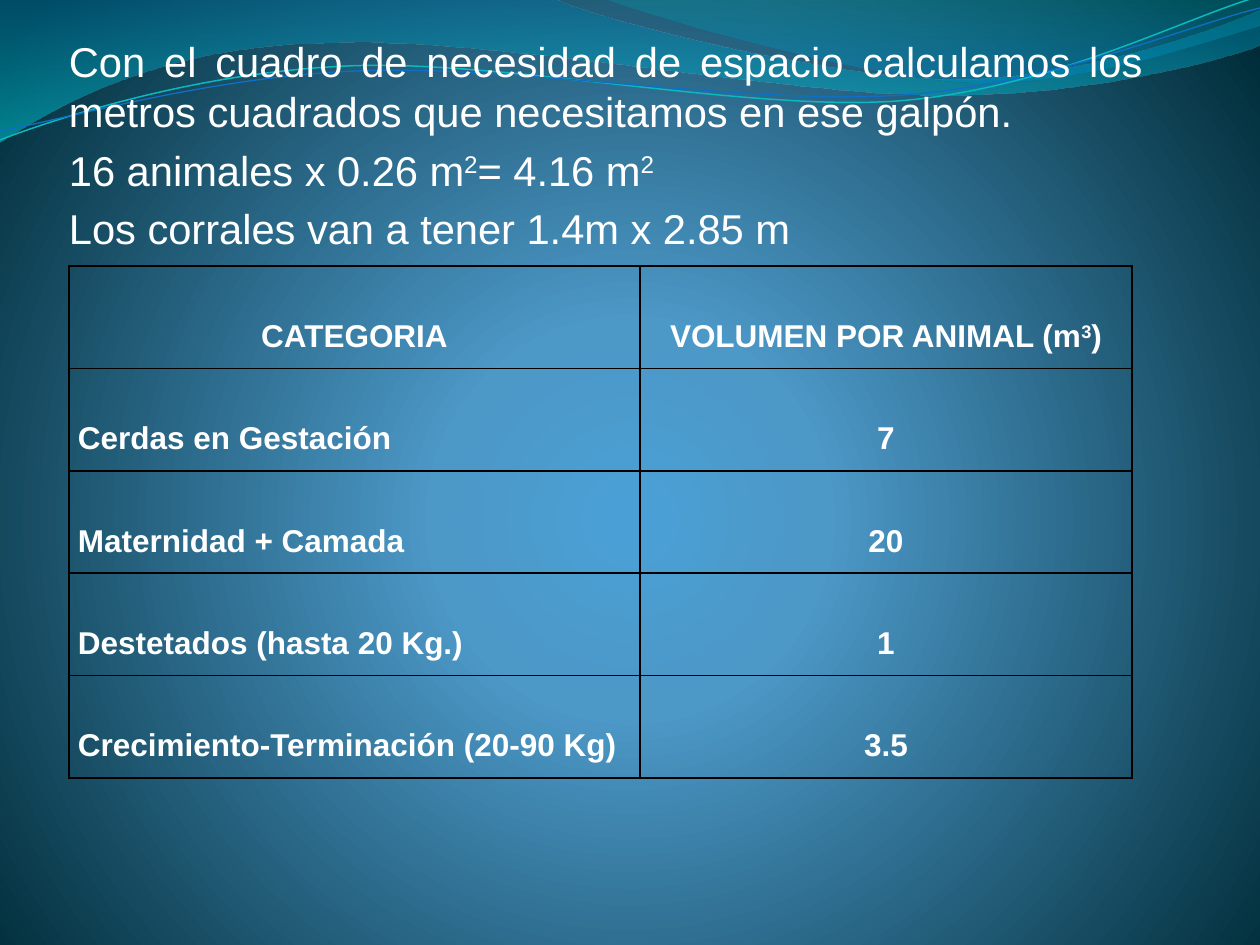
from math import cos, radians, sin

from lxml.etree import SubElement
from pptx import Presentation
from pptx.dml.color import RGBColor
from pptx.enum.text import MSO_ANCHOR, PP_ALIGN
from pptx.oxml import parse_xml
from pptx.oxml.ns import nsdecls, qn
from pptx.util import Pt

PX = 914400 / 126
COLORS = {
    "text": "FFFFFF", "border": "000000",
    "glow": "4AA0D6", "halo": "4C98C7", "edge": "002C38",
    "deep": "0074A1", "aqua": "00C6CF", "teal": "00A1A9", "sea": "008BBF",
    "cyan": "0AB8BF", "blue": "0F6FC6",
}
BACKGROUND = [(0, "glow", 100), (25, "halo", 100), (100, "edge", 100)]
RADIAL = '<a:path path="circle"><a:fillToRect l="10000" t="110000" r="10000" b="100000"/></a:path>'
VERTICAL = '<a:lin ang="5400000" scaled="1"/>'

WAVES = [
    ((-1, -1, 1262, 143),
     [(0, 0), (554, -1), (600, 21, 837, 79, 955, 79), (1075, 79, 1207, 33, 1260, 11),
      (1261, 45), (1239, 55, 1096, 96, 940, 95), (784, 95, 481, 35, 324, 43),
      (163, 45, 58, 105, -1, 142), (0, 0)],
     [(0, "deep", 45), (100, "aqua", 55)]),
    ((604, -1, 656, 88),
     [(604, -1), (641, 14, 859, 78, 969, 82), (1079, 87, 1211, 40, 1260, 26),
      (1260, 0), (604, -1)],
     [(0, "teal", 30), (80, "sea", 45)]),
]
STRAND_TURN = 357.3
STRANDS = [
    ((-3, 28, 1263, 89),
     [(0, 140), (60, 117, 199, 72, 349, 66), (498, 59, 747, 112, 898, 101),
      (1050, 89, 1182, 19, 1257, -3)], "cyan", 0.85),
    ((-3, 38, 1264, 73),
     [(0, 131), (59, 121, 207, 77, 357, 71), (508, 64, 752, 106, 903, 95),
      (1053, 84, 1186, 26, 1260, 8)], "blue", 0.75),
]

INTRO_BOX = (69, 29, 1082, 442)
INTRO = [
    ["Con el cuadro de necesidad de espacio calculamos los metros cuadrados "
     "que necesitamos en ese galpón."],
    ["16 animales x 0.26 m", "2", "= 4.16 m", "2"],
    ["Los corrales van a tener 1.4m x 2.85 m"],
]
TABLE_AT = (69, 266)
TABLE_HEIGHT = 512
COLUMNS = (571, 492)
ROWS = [
    (["CATEGORIA"], ["VOLUMEN POR ANIMAL (m", "3", ")"]),
    (["Cerdas en Gestación"], ["7"]),
    (["Maternidad + Camada"], ["20"]),
    (["Destetados (hasta 20 Kg.)"], ["1"]),
    (["Crecimiento-Terminación (20-90 Kg)"], ["3.5"]),
]
INTRO_FONT = {"name": "Arial", "size": Pt(23.8), "bold": False}
TABLE_FONT = {"name": "Arial", "size": Pt(18), "bold": True}


def px(*values):
    return [round(v * PX) for v in values]


def rgb(name):
    return RGBColor.from_string(COLORS[name])


def set_format(obj, values):
    for key, value in values.items():
        setattr(obj, key, value)


def set_gradient(element, stops, shade):
    solid = element.find(".//" + qn("a:solidFill"))
    marks = "".join(
        f'<a:gs pos="{pos * 1000}"><a:srgbClr val="{COLORS[name]}">'
        f'<a:alpha val="{alpha * 1000}"/></a:srgbClr></a:gs>'
        for pos, name, alpha in stops)
    grad = parse_xml(f'<a:gradFill {nsdecls("a")} rotWithShape="1">'
                     f'<a:gsLst>{marks}</a:gsLst>{shade}</a:gradFill>')
    solid.getparent().replace(solid, grad)


def to_local(box, turn, x, y):
    left, top, width, height = box
    angle = radians(-turn)
    dx, dy = x - left - width / 2, y - top - height / 2
    return px(dx * cos(angle) - dy * sin(angle) + width / 2,
              dx * sin(angle) + dy * cos(angle) + height / 2)


def add_curve(s, box, path, turn=0):
    left, top, width, height = box
    closed = path[0] == path[-1]
    builder = s.shapes.build_freeform(*px(left, top), scale=1.0)
    builder.add_line_segments([px(left + width, top + height)], close=False)
    sp = builder.convert_to_shape()
    outline = sp._element.find(".//" + qn("a:path"))
    for child in list(outline):
        outline.remove(child)
    for i, part in enumerate(path[:-1] if closed else path):
        tag = "a:cubicBezTo" if len(part) == 6 else "a:lnTo" if i else "a:moveTo"
        move = SubElement(outline, qn(tag))
        for x, y in zip(part[::2], part[1::2]):
            across, down = to_local(box, turn, x, y)
            SubElement(move, qn("a:pt"), x=str(across), y=str(down))
    if closed:
        SubElement(outline, qn("a:close"))
    sp.rotation = turn
    sp.shadow.inherit = False
    return sp


def write(p, parts, font):
    for i, text in enumerate(parts):
        r = p.add_run()
        r.text = text
        set_format(r.font, font)
        r.font.color.rgb = rgb("text")
        if i % 2:
            r.font._element.set("baseline", "30000")


def add_intro(s):
    tf = s.shapes.add_textbox(*px(*INTRO_BOX)).text_frame
    left, top, right, bottom = px(0, 7, 9, 6)
    set_format(tf, {"word_wrap": True, "margin_left": left, "margin_right": right,
                    "margin_top": top, "margin_bottom": bottom})
    for i, parts in enumerate(INTRO):
        p = tf.add_paragraph() if i else tf.paragraphs[0]
        p.alignment = PP_ALIGN.JUSTIFY
        p.space_before = Pt(4.8 if i else 0)
        write(p, parts, INTRO_FONT)


def add_borders(cell):
    tc_pr = cell._tc.get_or_add_tcPr()
    for side in "LRTB":
        tc_pr.append(parse_xml(
            f'<a:ln{side} {nsdecls("a")} w="12700"><a:solidFill>'
            f'<a:srgbClr val="{COLORS["border"]}"/></a:solidFill></a:ln{side}>'))


def add_volumes(s):
    size = (sum(COLUMNS), TABLE_HEIGHT)
    table = s.shapes.add_table(len(ROWS), len(COLUMNS), *px(*TABLE_AT, *size)).table
    set_format(table, {"first_row": False, "horz_banding": False})
    for column, width in zip(table.columns, px(*COLUMNS)):
        column.width = width
    side, height = px(9, TABLE_HEIGHT / len(ROWS))
    for i, row in enumerate(ROWS):
        table.rows[i].height = height
        for j, parts in enumerate(row):
            cell = table.cell(i, j)
            set_format(cell, {"margin_left": side, "margin_right": side, "margin_top": 0,
                              "margin_bottom": 0, "vertical_anchor": MSO_ANCHOR.TOP})
            add_borders(cell)
            cell.fill.background()
            p = cell.text_frame.paragraphs[0]
            p.alignment = PP_ALIGN.JUSTIFY if i and not j else PP_ALIGN.CENTER
            p.line_spacing = 2.5
            write(p, parts, TABLE_FONT)


def main():
    prs = Presentation()
    prs.slide_width, prs.slide_height = px(1260, 945)
    s = prs.slides.add_slide(prs.slide_layouts[6])
    s.background.fill.solid()
    s.background.fill.fore_color.rgb = rgb("edge")
    set_gradient(s._element, BACKGROUND, RADIAL)
    for box, path, stops in WAVES:
        sp = add_curve(s, box, path)
        sp.line.fill.background()
        sp.fill.solid()
        set_gradient(sp._element, stops, VERTICAL)
    for box, path, color, width in STRANDS:
        sp = add_curve(s, box, path, STRAND_TURN)
        sp.fill.background()
        sp.line.color.rgb = rgb(color)
        sp.line.width = Pt(width)
    add_intro(s)
    add_volumes(s)
    prs.save("out.pptx")


if __name__ == "__main__":
    main()
